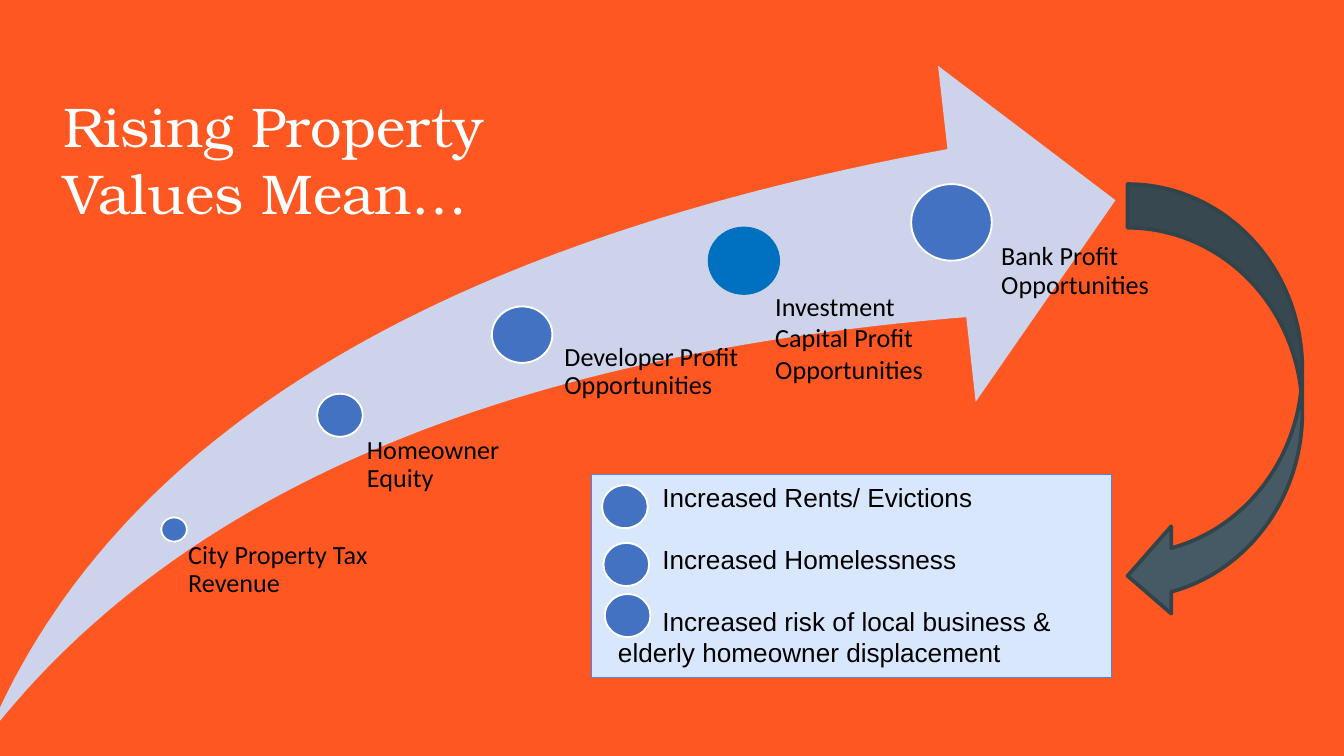
from pptx import Presentation
from pptx.dml.color import RGBColor
from pptx.enum.shapes import MSO_SHAPE
from pptx.enum.text import MSO_ANCHOR, MSO_AUTO_SIZE, PP_ALIGN
from pptx.util import Inches, Pt


def paint(shape, fill, line=None, width=1):
    shape.shadow.inherit = False
    shape.fill.solid()
    shape.fill.fore_color.rgb = RGBColor.from_string(fill)
    if line:
        shape.line.color.rgb = RGBColor.from_string(line)
        shape.line.width = Pt(width)
    else:
        shape.line.fill.background()


def write(shape, lines, font="Calibri", size=14, color="000000", space=None,
          gap=0, inset=(0.1, 0.05, 0.1, 0.05), anchor=MSO_ANCHOR.TOP):
    frame = shape.text_frame
    frame.word_wrap = True
    frame.auto_size = MSO_AUTO_SIZE.NONE
    frame.vertical_anchor = anchor
    (frame.margin_left, frame.margin_top,
     frame.margin_right, frame.margin_bottom) = map(Inches, inset)
    frame.text = "\n".join(lines)
    for i, para in enumerate(frame.paragraphs):
        para.alignment = PP_ALIGN.LEFT
        para.line_spacing = space
        para.space_before = Pt(gap if i else 0)
        for run in para.runs:
            run.font.name = font
            run.font.size = Pt(size)
            run.font.color.rgb = RGBColor.from_string(color)


deck = Presentation()
deck.slide_width = Inches(10)
deck.slide_height = Inches(10 * 9 / 16)
slide = deck.slides.add_slide(deck.slide_layouts[5])
slide.background.fill.solid()
slide.background.fill.fore_color.rgb = RGBColor.from_string("FF5722")
shapes = slide.shapes
BLUE, WHITE = "4372C3", "FFFFFF"

title = shapes.title
title.left, title.top, title.width, title.height = map(
    Inches, (0.37, 0.03, 4.51, 3.09))
# The deep bottom inset lifts the centred title
write(title, ["Rising Property Values Mean…"], font="TeX Gyre Bonum", size=30,
      color=WHITE, inset=(0.1, 0.1, 0.1, 0.89), anchor=MSO_ANCHOR.MIDDLE)

# Rising arrow: two cubic curves joined by a straight head
upper = [(-0.1, 5.49), (0.83, 3.26), (3.22, 1.81), (7.05, 1.11)]
head = [(6.98, 0.49), (8.3, 1.49), (7.26, 2.99)]
lower = [(7.19, 2.36), (3.73, 2.64), (1.3, 3.68), (-0.1, 5.49)]
STEPS = 60
edges = []
for curve in (upper, lower):
    edge = []
    for n in range(STEPS + 1):
        t = n / STEPS
        parts = ((1 - t) ** 3, 3 * t * (1 - t) ** 2, 3 * t * t * (1 - t), t ** 3)
        edge.append(tuple(sum(p * pt[axis] for p, pt in zip(parts, curve))
                          for axis in (0, 1)))
    edges.append(edge)
points = [(Inches(x), Inches(y)) for x, y in edges[0] + head + edges[1]]
pen = shapes.build_freeform(*points[0])
pen.add_line_segments(points[1:], close=True)
paint(pen.convert_to_shape(), "CCD3EA")

# Dot box, label box, left inset, label
stops = [
    ((1.2, 3.85, 0.19, 0.18), (1.32, 4.03, 1.44, 1.19), 0.08,
     "City Property Tax Revenue"),
    ((2.36, 2.93, 0.34, 0.32), (2.59, 3.25, 1.51, 0.49), 0.14,
     "Homeowner Equity"),
    ((3.66, 2.28, 0.45, 0.42), (4.01, 2.56, 1.76, 0.48), 0.19,
     "Developer Profit Opportunities"),
    ((6.78, 1.37, 0.6, 0.57), (7.2, 1.81, 1.76, 0.57), 0.25,
     "Bank Profit Opportunities"),
]
for spot, box, inset, label in stops:
    dot = shapes.add_shape(MSO_SHAPE.OVAL, *map(Inches, spot))
    paint(dot, BLUE, WHITE)
    write(shapes.add_textbox(*map(Inches, box)), [label], space=0.9,
          inset=(inset, 0, 0, 0))

dot = shapes.add_shape(MSO_SHAPE.OVAL, *map(Inches, (5.28, 1.7, 0.51, 0.48)))
paint(dot, "0070C0", "0070C0", 2)
label = shapes.add_textbox(*map(Inches, (5.67, 2.11, 1.6, 0.81)))
write(label, ["Investment Capital Profit Opportunities"])

bend = shapes.add_shape(MSO_SHAPE.CURVED_LEFT_ARROW,
                        *map(Inches, (8.39, 1.37, 1.3, 3.24)))
paint(bend, "455A64", "33434A", 2)

# Outcomes, with a first-line indent that clears the dots
panel = shapes.add_shape(MSO_SHAPE.RECTANGLE,
                         *map(Inches, (4.4, 3.53, 3.87, 1.51)))
paint(panel, "D9E7FD", "4285F4", 0.75)
write(panel, ["Increased Rents/ Evictions", "Increased Homelessness",
              "Increased risk of local business & elderly homeowner displacement"],
      font="Arial", gap=16.5)
for para in panel.text_frame.paragraphs:
    props = para._p.get_or_add_pPr()
    props.set("marL", str(Inches(0.1)))
    props.set("indent", str(Inches(0.33)))

for x, y in ((4.48, 3.61), (4.49, 4.04), (4.5, 4.42)):
    dot = shapes.add_shape(MSO_SHAPE.OVAL, *map(Inches, (x, y, 0.34, 0.32)))
    paint(dot, BLUE, WHITE)

deck.save("out.pptx")
